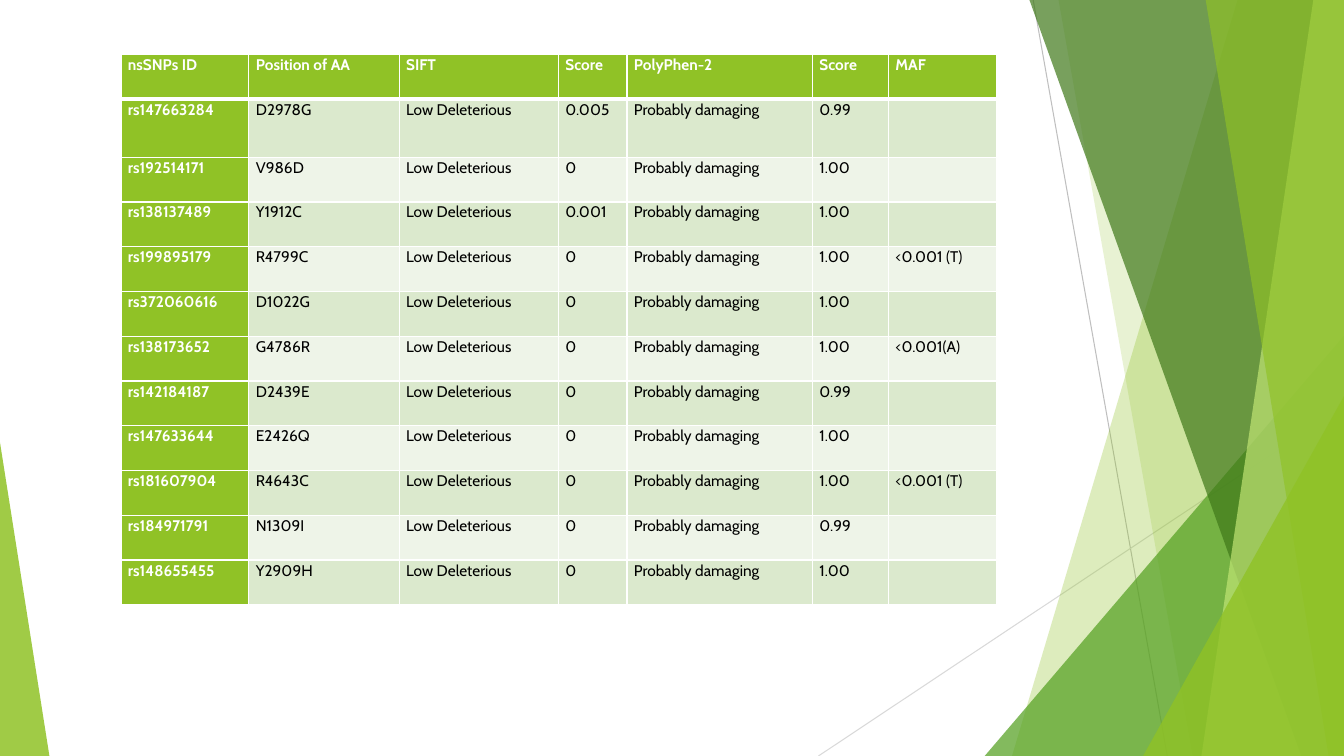
from lxml import etree
from pptx import Presentation, util as u
from pptx.dml.color import RGBColor
from pptx.enum import shapes
from pptx.oxml import ns

Pt = u.Pt
WHITE = RGBColor(0xFF, 0xFF, 0xFF)
BLACK = RGBColor(0x00, 0x00, 0x00)
LIME = RGBColor(0x90, 0xC2, 0x26)
GREEN = RGBColor(0x54, 0xA0, 0x21)
FOREST = RGBColor(0x3F, 0x78, 0x19)
PALE = RGBColor(0xC0, 0xE4, 0x74)
BANDS = RGBColor(0xEE, 0xF4, 0xE8), RGBColor(0xDB, 0xE9, 0xCD)
SILVER = RGBColor(0xBF, 0xBF, 0xBF)
MIST = RGBColor(0xD9, 0xD9, 0xD9)
WIDE, HIGH = 960, 540

HEAD = ["nsSNPs ID", "Position of AA", "SIFT", "Score", "PolyPhen-2", "Score", "MAF"]
SNPS = [
    ("rs147663284", "D2978G", "0.005", "0.99", ""),
    ("rs192514171", "V986D", "0", "1.00", ""),
    ("rs138137489", "Y1912C", "0.001", "1.00", ""),
    ("rs199895179", "R4799C", "0", "1.00", "<0.001 (T)"),
    ("rs372060616", "D1022G", "0", "1.00", ""),
    ("rs138173652", "G4786R", "0", "1.00", "<0.001(A)"),
    ("rs142184187", "D2439E", "0", "0.99", ""),
    ("rs147633644", "E2426Q", "0", "1.00", ""),
    ("rs181607904", "R4643C", "0", "1.00", "<0.001 (T)"),
    ("rs184971791", "N1309I", "0", "0.99", ""),
    ("rs148655455", "Y2909H", "0", "1.00", ""),
]


class Deck:
    """Draws styled elements on the current slide, with lengths in points."""

    def __init__(self, slide, font="Cabin", size=11):
        self.shapes = slide.shapes
        self.font = font
        self.size = size

    def line(self, x1, y1, x2, y2, color):
        rule = self.shapes.add_connector(
            shapes.MSO_CONNECTOR.STRAIGHT, Pt(x1), Pt(y1), Pt(x2), Pt(y2))
        rule.line.color.rgb = color
        rule.line.width = Pt(0.75)
        etree.SubElement(rule._element.spPr, ns.qn("a:effectLst"))

    def paint(self, shape, color, alpha):
        shape.shadow.inherit = False
        shape.line.fill.background()
        shape.fill.solid()
        shape.fill.fore_color.rgb = color
        tint = shape._element.spPr.find(".//" + ns.qn("a:srgbClr"))
        etree.SubElement(tint, ns.qn("a:alpha"), val=str(alpha * 1000))

    def panel(self, top, base, color, alpha):
        form = self.shapes.build_freeform(Pt(top), Pt(-0.7))
        form.add_line_segments(
            [(Pt(WIDE), Pt(-0.7)), (Pt(WIDE), Pt(HIGH)), (Pt(base), Pt(HIGH))])
        self.paint(form.convert_to_shape(), color, alpha)

    def wedge(self, x, y, width, tip, color, alpha):
        shape = self.shapes.add_shape(
            shapes.MSO_SHAPE.ISOSCELES_TRIANGLE, Pt(x), Pt(y), Pt(width), Pt(HIGH - y))
        shape.adjustments[0] = tip
        self.paint(shape, color, alpha)

    def edge(self, cell, side, width):
        props = cell._tc.get_or_add_tcPr()
        line = etree.SubElement(props, ns.qn("a:ln" + side), w=str(Pt(width)))
        fill = etree.SubElement(line, ns.qn("a:solidFill"))
        etree.SubElement(fill, ns.qn("a:srgbClr"), val=str(WHITE))

    def cell(self, cell, words, fill, strong, top, base):
        for side, width in (("L", 1), ("R", 1), ("T", top), ("B", base)):
            self.edge(cell, side, width)
        cell.fill.solid()
        cell.fill.fore_color.rgb = fill
        cell.margin_left = cell.margin_right = Pt(5)
        cell.margin_top = cell.margin_bottom = 0
        cell.text = words
        para = cell.text_frame.paragraphs[0]
        para.line_spacing = 1.06
        para.font.name = self.font
        para.font.size = Pt(self.size)
        para.font.bold = strong
        para.font.color.rgb = WHITE if strong else BLACK

    def table(self, x, y, rows, widths, heights):
        frame = self.shapes.add_table(
            len(rows), len(widths), Pt(x), Pt(y), Pt(sum(widths)), Pt(sum(heights)))
        grid = frame.table
        grid.first_col = True
        grid.horz_banding = False
        for col, width in zip(grid.columns, widths):
            col.width = Pt(width)
        for row, height in zip(grid.rows, heights):
            row.height = Pt(height)
        for r, row in enumerate(rows):
            top, base = 3 if r == 1 else 1, 3 if r == 0 else 1
            for c, words in enumerate(row):
                strong = r == 0 or c == 0
                fill = LIME if strong else BANDS[r % 2]
                self.cell(grid.cell(r, c), words, fill, strong, top, base)


def main():
    prs = Presentation()
    prs.slide_width, prs.slide_height = Pt(WIDE), Pt(HIGH)
    deck = Deck(prs.slides.add_slide(prs.slide_layouts[6]))

    deck.line(738, 0, 833.8, HIGH, SILVER)
    deck.line(WIDE, 290.2, 584.6, HIGH, MIST)
    deck.panel(884.2, 722.9, LIME, 30)
    deck.panel(756, 851.8, LIME, 20)
    deck.wedge(703.4, 239.8, 256.6, 1, GREEN, 72)
    deck.panel(735.1, 929.5, FOREST, 70)
    deck.panel(938.2, 858.2, PALE, 70)
    deck.panel(861.1, 949, LIME, 65)
    deck.wedge(816.5, 283, 143.5, 1, LIME, 80)
    deck.wedge(0, 316.1, 35.3, 0, LIME, 85)

    rows = [HEAD] + [
        (snp, place, "Low Deleterious", sift, "Probably damaging", poly, maf)
        for snp, place, sift, poly, maf in SNPS]
    widths = [91.4, 107.3, 113.8, 49, 132.5, 54.2, 77]
    heights = [32, 41.4] + [32] * 10
    deck.table(86.4, 38.9, rows, widths, heights)
    prs.save("out.pptx")


if __name__ == "__main__":
    main()
